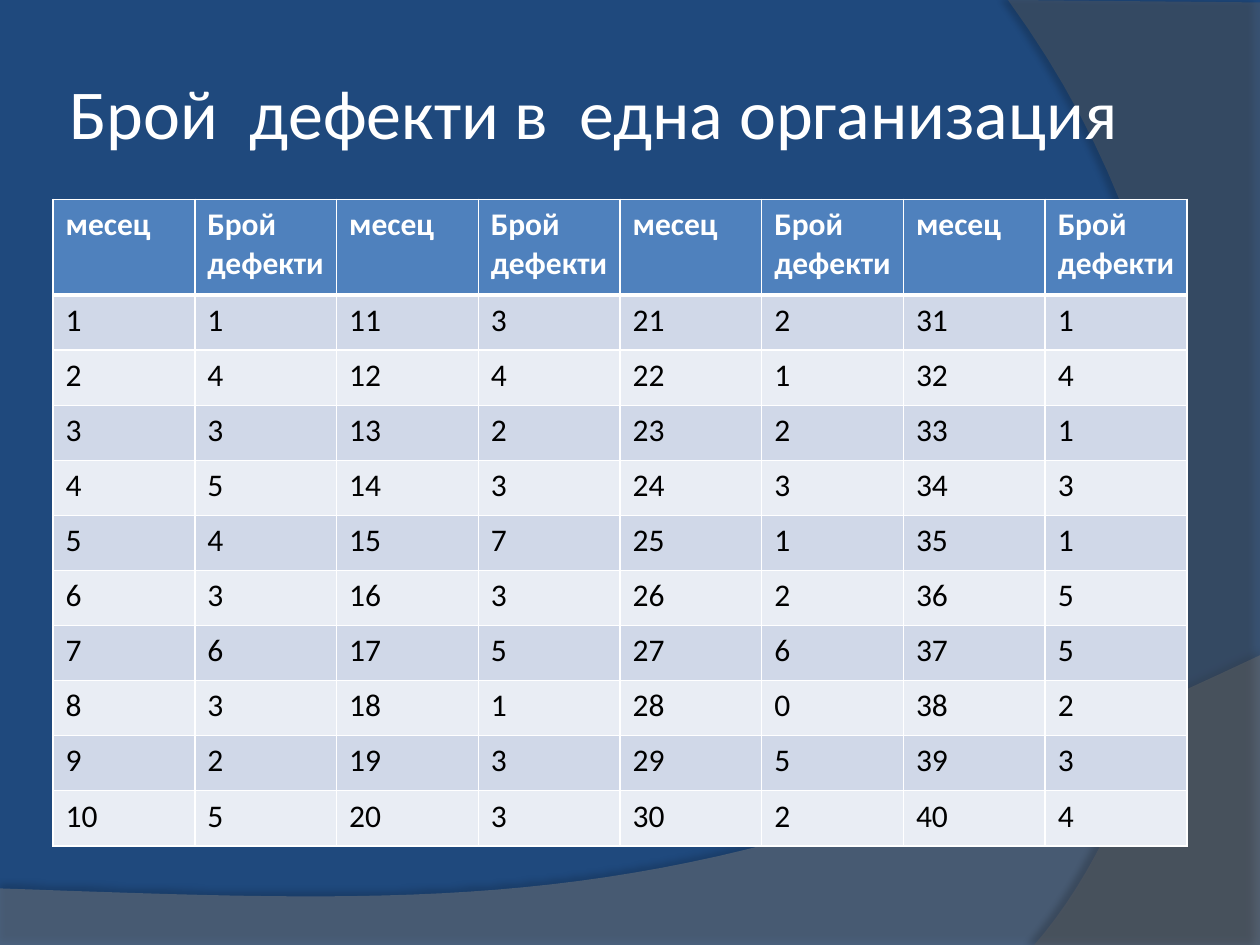
from lxml.etree import SubElement as Sub
from pptx import Presentation
from pptx.dml.color import RGBColor
from pptx.enum.text import MSO_ANCHOR as Anchor
from pptx.oxml.ns import qn
from pptx.util import Cm, Pt

FONT = "Calibri"
WHITE = "FFFFFF"


def tint(part, color):
    """Give a fill or a font one solid colour."""
    if hasattr(part, "solid"):
        part.solid()
        part.fore_color.rgb = RGBColor.from_string(color)
    else:
        part.color.rgb = RGBColor.from_string(color)


def curve(a, b, c, d, steps=40):
    """Points along the cubic Bezier curve from a to d."""
    for i in range(1, steps + 1):
        t = i / steps
        u = 1 - t
        yield tuple(u**3 * p + 3 * u * u * t * q + 3 * u * t * t * r + t**3 * s
                    for p, q, r, s in zip(a, b, c, d))


deck = Presentation()
deck.slide_width, deck.slide_height = Cm(25.4), Cm(19.05)
slide = deck.slides.add_slide(deck.slide_layouts[6])
tint(slide.background.fill, "1F497D")

# Backdrop: corners, then the curve's two handles and end, all in cm
waves = [
    ([(0, 17.91), (0, 19.08), (25.4, 19.08), (25.4, 13.21)],
     [(14.2, 18.52), (9.93, 18.26), (0, 17.91)],
     "7F7F7F", 45, 35, 3.5, 270),
    ([(25.4, 0.05), (25.4, 19.05), (20.85, 19.05)],
     [(23.75, 15.72), (25.86, 7.62), (20.32, 0)],
     "5E5E5E", 40, 45, 4, 180),
]
for edge, bend, color, alpha, dark, dist, angle in waves:
    dots = edge + list(curve(edge[-1], *bend))
    dots = [(Cm(x), Cm(y)) for x, y in dots]
    pen = slide.shapes.build_freeform(*dots[0])
    pen.add_line_segments(dots[1:], close=True)
    wave = pen.convert_to_shape()
    tint(wave.fill, color)
    wave.line.fill.background()
    shade = wave.element.xpath("./p:spPr/a:solidFill/a:srgbClr")[0]
    Sub(shade, qn("a:alpha"), val=str(alpha * 1000))
    wave.shadow.inherit = False
    glow = wave.element.xpath("./p:spPr/a:effectLst")[0]
    cast = Sub(glow, qn("a:outerShdw"), blurRad=str(Pt(4)), dist=str(Pt(dist)),
               dir=str(angle * 60000), algn="ctr", rotWithShape="0")
    shade = Sub(cast, qn("a:srgbClr"), val="000000")
    Sub(shade, qn("a:alpha"), val=str(dark * 1000))

# Title
title = slide.shapes.add_textbox(Cm(1.27), Cm(0.84), Cm(22.86), Cm(2.82))
frame = title.text_frame
frame.word_wrap = True
frame.vertical_anchor = Anchor.MIDDLE
frame.margin_left = frame.margin_right = Cm(0.13)
frame.margin_top = frame.margin_bottom = Cm(0.13)
run = frame.paragraphs[0].add_run()
run.text = "Брой  дефекти в  една организация"
run.font.name, run.font.size = FONT, Pt(40)
tint(run.font, WHITE)

# Table: months run down each pair of columns, ten to a pair
faults = [
    [1, 4, 3, 5, 4, 3, 6, 3, 2, 5],
    [3, 4, 2, 3, 7, 3, 5, 1, 3, 3],
    [2, 1, 2, 3, 1, 2, 6, 0, 5, 2],
    [1, 4, 1, 3, 1, 5, 5, 2, 3, 4],
]
rows = [["месец", "Брой дефекти"] * len(faults)]
for i in range(10):
    rows.append([n for k, group in enumerate(faults)
                 for n in (10 * k + i + 1, group[i])])

table = slide.shapes.add_table(len(rows), len(rows[0]), Cm(1.07), Cm(4.02),
                               Cm(22.86), Cm(13)).table
table.horz_banding = False
for r, row in enumerate(rows):
    head = r == 0
    table.rows[r].height = Cm(1.93 if head else 1.11)
    wide = {"T": 3 if r == 1 else 1, "B": 3 if head else 1}
    for c, value in enumerate(row):
        cell = table.cell(r, c)
        props = cell._tc.get_or_add_tcPr()
        for side in "LRTB":
            line = Sub(props, qn("a:ln" + side), w=str(Pt(wide.get(side, 1))))
            Sub(Sub(line, qn("a:solidFill")), qn("a:srgbClr"), val=WHITE)
        tint(cell.fill, "4F81BD" if head else "D0D8E8" if r % 2 else "E9EDF4")
        run = cell.text_frame.paragraphs[0].add_run()
        run.text = str(value)
        run.font.name, run.font.size, run.font.bold = FONT, Pt(18), head
        tint(run.font, WHITE if head else "000000")

deck.save("out.pptx")
